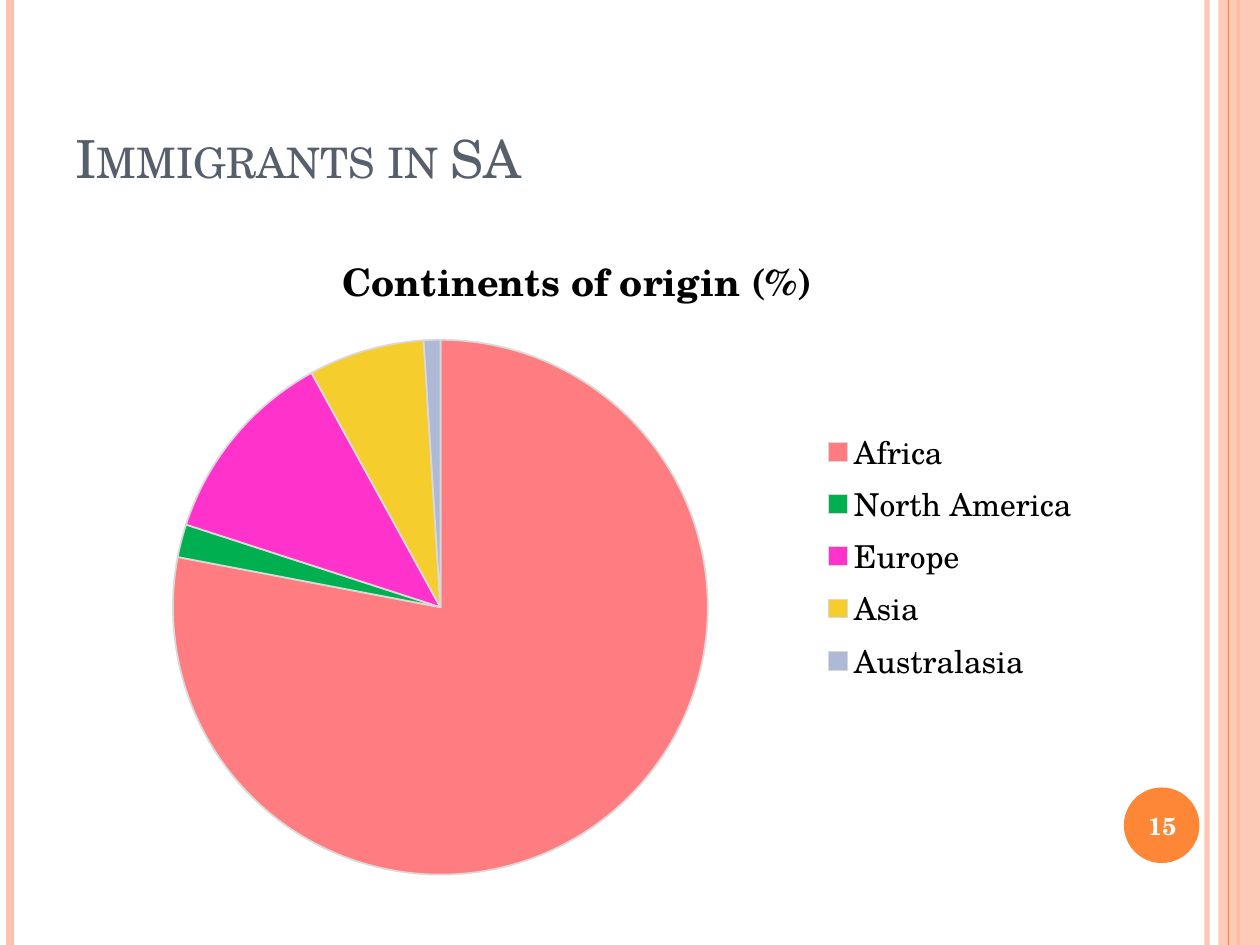
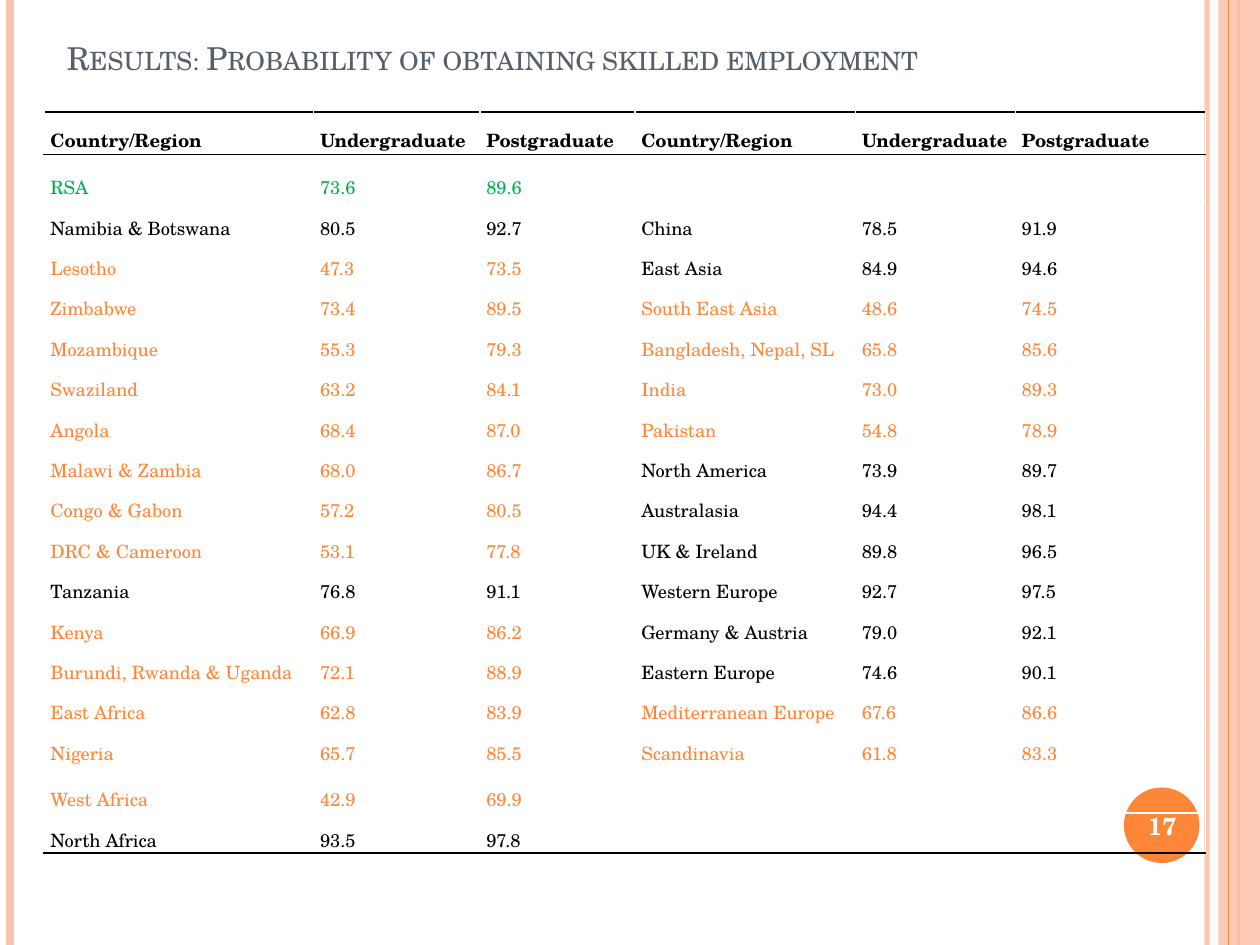
from lxml.etree import SubElement
from pptx import Presentation
from pptx.chart.data import CategoryChartData
from pptx.dml.color import RGBColor
from pptx.enum.chart import XL_CHART_TYPE, XL_LEGEND_POSITION
from pptx.enum.shapes import MSO_CONNECTOR, MSO_SHAPE
from pptx.enum.text import MSO_ANCHOR, MSO_AUTO_SIZE, PP_ALIGN
from pptx.oxml.ns import qn
from pptx.util import Inches, Pt

FONT = "TeX Gyre Schola"
COLORS = {
    "peach": "FEC3AE",
    "orange": "FE8637",
    "slate": "575F6D",
    "black": "000000",
    "white": "FFFFFF",
    "green": "00B050",
    "slice_edge": "D9D9D9",
}
ORIGINS = [
    ("Africa", 78, "FF7C80"),
    ("North America", 2, "00B050"),
    ("Europe", 12, "FF33CC"),
    ("Asia", 7, "F5CD2D"),
    ("Australasia", 1, "AEBAD5"),
]
HEADINGS = ("Country/Region", "Undergraduate", "Postgraduate")
NO_REGION = ("", "", "")
AFRICAN_REGIONS = [
    ("RSA", "73.6", "89.6"),
    ("Namibia & Botswana", "80.5", "92.7"),
    ("Lesotho", "47.3", "73.5"),
    ("Zimbabwe", "73.4", "89.5"),
    ("Mozambique", "55.3", "79.3"),
    ("Swaziland", "63.2", "84.1"),
    ("Angola", "68.4", "87.0"),
    ("Malawi & Zambia", "68.0", "86.7"),
    ("Congo & Gabon", "57.2", "80.5"),
    ("DRC & Cameroon", "53.1", "77.8"),
    ("Tanzania", "76.8", "91.1"),
    ("Kenya", "66.9", "86.2"),
    ("Burundi, Rwanda & Uganda", "72.1", "88.9"),
    ("East Africa", "62.8", "83.9"),
    ("Nigeria", "65.7", "85.5"),
    ("West Africa", "42.9", "69.9"),
    ("North Africa", "93.5", "97.8"),
]
OTHER_REGIONS = [
    NO_REGION,
    ("China", "78.5", "91.9"),
    ("East Asia", "84.9", "94.6"),
    ("South East Asia", "48.6", "74.5"),
    ("Bangladesh, Nepal, SL", "65.8", "85.6"),
    ("India", "73.0", "89.3"),
    ("Pakistan", "54.8", "78.9"),
    ("North America", "73.9", "89.7"),
    ("Australasia", "94.4", "98.1"),
    ("UK & Ireland", "89.8", "96.5"),
    ("Western Europe", "92.7", "97.5"),
    ("Germany & Austria", "79.0", "92.1"),
    ("Eastern Europe", "74.6", "90.1"),
    ("Mediterranean Europe", "67.6", "86.6"),
    ("Scandinavia", "61.8", "83.3"),
    NO_REGION,
    NO_REGION,
]


def rgb(name):
    return RGBColor.from_string(COLORS[name])


def apply_format(target, values):
    for key, value in values.items():
        setattr(target, key, value)


def format_font(font, size, color, bold=False):
    apply_format(font, {"name": FONT, "size": Pt(size), "bold": bold})
    font.color.rgb = rgb(color)


def set_opacity(fill_owner, percent):
    color = next(fill_owner.iter(qn("a:srgbClr")))
    SubElement(color, qn("a:alpha"), val=str(percent * 1000))


def add_stripe(slide, x, height, color, width, opacity=100):
    stripe = slide.shapes.add_connector(
        MSO_CONNECTOR.STRAIGHT, Inches(x), 0, Inches(x), height)
    stripe.line.color.rgb = rgb(color)
    stripe.line.width = Pt(width)
    SubElement(stripe.element.spPr, qn("a:effectLst"))
    if opacity < 100:
        set_opacity(stripe.element.spPr, opacity)
    return stripe


def add_solid(slide, preset, box, color):
    solid = slide.shapes.add_shape(preset, *map(Inches, box))
    solid.shadow.inherit = False
    solid.fill.solid()
    solid.fill.fore_color.rgb = rgb(color)
    solid.line.fill.background()
    return solid


def decorate_layout(layout, slide, height):
    band = add_solid(slide, MSO_SHAPE.RECTANGLE, (9.67, 0, 0.33, 7.5), "peach")
    set_opacity(band.element.spPr, 87)
    decorations = [
        add_stripe(slide, 9.58, height, "peach", 3, 93),
        add_stripe(slide, 0.08, height, "peach", 4.5),
        add_stripe(slide, 9.83, height, "orange", 1.5),
        band,
        add_stripe(slide, 9.75, height, "orange", 0.75),
        add_solid(slide, MSO_SHAPE.OVAL, (8.92, 6.25, 0.6, 0.6), "orange"),
    ]
    for decoration in decorations:
        layout.shapes.element.append(decoration.element)


def fill_title(slide, text, box, size):
    title = slide.shapes.title
    apply_format(title, dict(zip(("left", "top", "width", "height"), map(Inches, box))))
    frame = title.text_frame
    apply_format(frame, {
        "auto_size": MSO_AUTO_SIZE.NONE,
        "word_wrap": True,
        "vertical_anchor": MSO_ANCHOR.BOTTOM,
    })
    paragraph = frame.paragraphs[0]
    paragraph.alignment = PP_ALIGN.LEFT
    run = paragraph.add_run()
    run.text = text
    format_font(run.font, size, "slate")
    run.font._element.set("cap", "small")


def add_page_number(slide, number):
    badge = slide.shapes.add_textbox(*map(Inches, (8.89, 6.27, 0.67, 0.57)))
    frame = badge.text_frame
    apply_format(frame, {"word_wrap": True, "vertical_anchor": MSO_ANCHOR.MIDDLE})
    paragraph = frame.paragraphs[0]
    paragraph.alignment = PP_ALIGN.CENTER
    run = paragraph.add_run()
    run.text = str(number)
    format_font(run.font, 14, "white", True)


def add_origin_pie(slide, box):
    heading = "Continents of origin (%)"
    names, shares, slice_colors = zip(*ORIGINS)
    data = CategoryChartData()
    data.categories = names
    data.add_series(heading, shares)
    chart = slide.shapes.add_chart(
        XL_CHART_TYPE.PIE, *map(Inches, box), data).chart
    format_font(chart.font, 18, "black")
    chart.has_title = True
    chart.chart_title.include_in_layout = False
    run = chart.chart_title.text_frame.paragraphs[0].add_run()
    run.text = heading
    format_font(run.font, 21.6, "black", True)
    chart.has_legend = True
    apply_format(chart.legend, {
        "position": XL_LEGEND_POSITION.RIGHT,
        "include_in_layout": False,
    })
    format_font(chart.legend.font, 18, "black")
    pie = chart.plots[0]
    pie.vary_by_categories = True
    for index, color in enumerate(slice_colors):
        slice_format = pie.series[0].points[index].format
        slice_format.fill.solid()
        slice_format.fill.fore_color.rgb = RGBColor.from_string(color)
        slice_format.line.color.rgb = rgb("slice_edge")
        slice_format.line.width = Pt(1)


def region_color(region):
    baseline = AFRICAN_REGIONS[0]
    if region == baseline:
        return "green"
    if region[1] and float(region[1]) < float(baseline[1]):
        return "orange"
    return "black"


def border_cell(cell, top, bottom):
    edges = {"lnL": "white", "lnR": "white", "lnT": top, "lnB": bottom}
    properties = cell._tc.get_or_add_tcPr()
    for edge, color in edges.items():
        line = SubElement(properties, qn(f"a:{edge}"), w=str(Pt(1)))
        fill = SubElement(line, qn("a:solidFill"))
        SubElement(fill, qn("a:srgbClr"), val=COLORS[color])


def fill_cell(cell, text, color, bold):
    apply_format(cell, {
        "margin_left": Inches(0.05),
        "margin_right": Inches(0.05),
        "margin_top": 0,
        "margin_bottom": 0,
        "vertical_anchor": MSO_ANCHOR.BOTTOM,
    })
    cell.fill.background()
    paragraph = cell.text_frame.paragraphs[0]
    paragraph.line_spacing = 1.5
    if text:
        run = paragraph.add_run()
        run.text = text
        format_font(run.font, 10.5, color, bold)
    else:
        paragraph._p.get_or_add_endParaRPr().set("sz", "1050")


def add_probability_table(slide, box):
    rows = [(HEADINGS, HEADINGS), *zip(AFRICAN_REGIONS, OTHER_REGIONS)]
    last = len(rows) - 1
    widths = (2.14, 1.32, 1.23, 1.75, 1.27, 1.51)
    heights = {0: 0.33, 1: 0.37, last - 1: 0.37}
    table = slide.shapes.add_table(
        len(rows), len(widths), *map(Inches, box)).table
    apply_format(table, {"first_row": False, "horz_banding": False})
    for column, width in zip(table.columns, widths):
        column.width = Inches(width)
    for row_index, halves in enumerate(rows):
        table.rows[row_index].height = Inches(heights.get(row_index, 0.32))
        top = "black" if row_index < 2 else "white"
        bottom = "black" if row_index in (0, last) else "white"
        for half_index, half in enumerate(halves):
            is_heading = row_index == 0
            color = "black" if is_heading else region_color(half)
            for offset, text in enumerate(half):
                cell = table.cell(row_index, half_index * len(HEADINGS) + offset)
                border_cell(cell, top, bottom)
                fill_cell(cell, text, color, is_heading)


def build_origin_slide(slide):
    fill_title(slide, "Immigrants in SA", (0.5, 0.3, 8.17, 1.25), 30)
    add_origin_pie(slide, (0.5, 1.75, 8.17, 5.33))
    add_page_number(slide, 15)


def build_results_slide(slide):
    fill_title(slide, "Results: Probability of obtaining skilled employment",
               (0.43, 0.36, 8.17, 0.3), 18)
    add_probability_table(slide, (0.35, 0.89, 9.22, 5.87))
    add_page_number(slide, 17)


def main():
    deck = Presentation()
    apply_format(deck, {"slide_width": Inches(10), "slide_height": Inches(7.5)})
    layout = deck.slide_layouts[5]
    origin_slide, results_slide = (deck.slides.add_slide(layout) for _ in range(2))
    decorate_layout(layout, origin_slide, deck.slide_height)
    build_origin_slide(origin_slide)
    build_results_slide(results_slide)
    deck.save("out.pptx")


if __name__ == "__main__":
    main()
